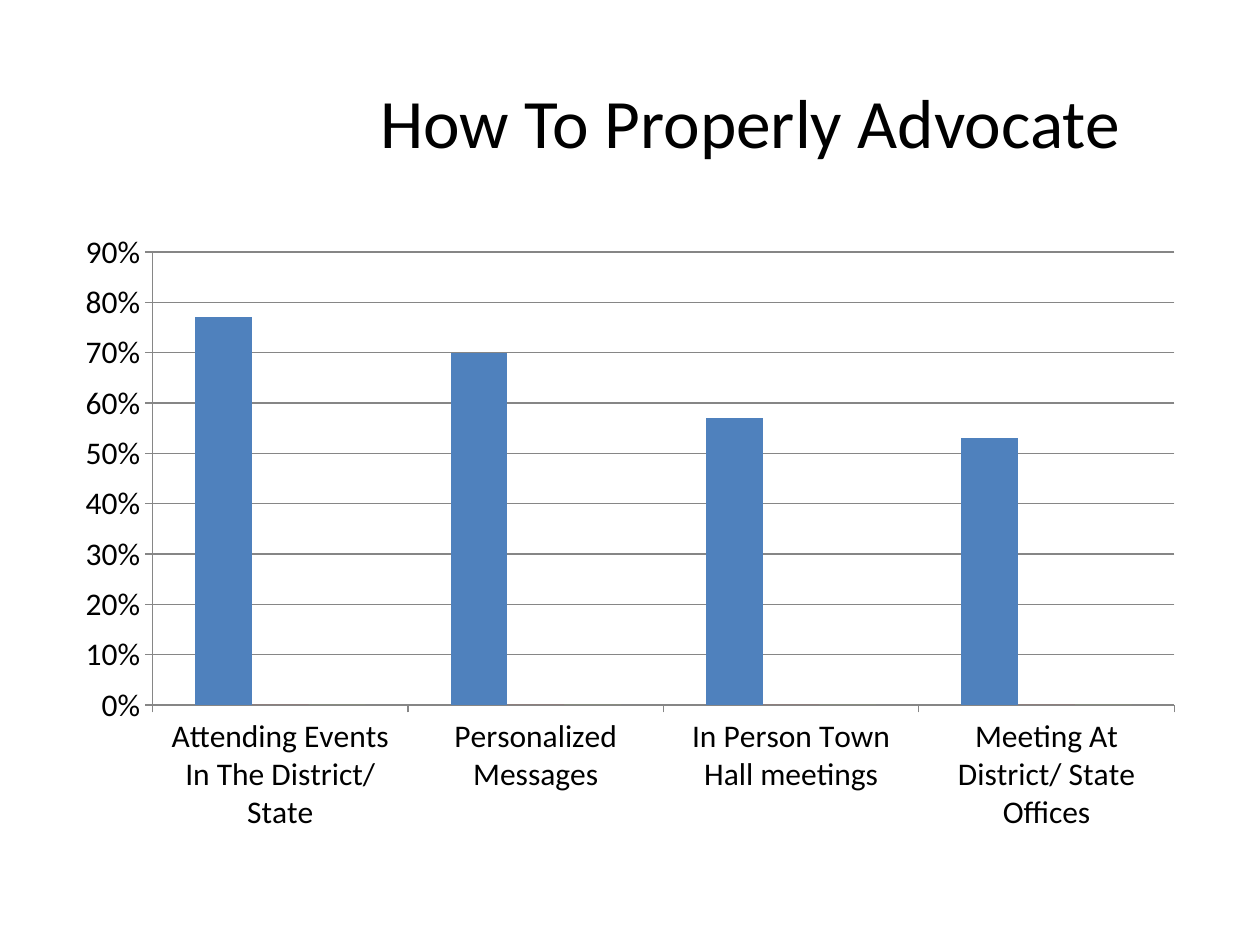
"""Build the advocacy slide: a title over a clustered column chart."""
from pptx import Presentation
from pptx.chart.data import CategoryChartData
from pptx.dml.color import RGBColor
from pptx.enum.chart import XL_CHART_TYPE, XL_TICK_MARK
from pptx.enum.text import MSO_ANCHOR, PP_ALIGN
from pptx.util import Inches, Pt

COLUMN = XL_CHART_TYPE.COLUMN_CLUSTERED
OUT = XL_TICK_MARK.OUTSIDE
MIDDLE = MSO_ANCHOR.MIDDLE
CENTER = PP_ALIGN.CENTER

BLACK = RGBColor(0x00, 0x00, 0x00)
GRAY = RGBColor(0x86, 0x86, 0x86)
BLUE = RGBColor(0x4F, 0x81, 0xBD)
RED = RGBColor(0xC0, 0x50, 0x4D)
GREEN = RGBColor(0x9B, 0xBB, 0x59)
FONT = "Calibri"

TITLE = "How To Properly Advocate"
WAYS = [
    "Attending Events In The District/State",
    "Personalized Messages",
    "In Person Town Hall meetings",
    "Meeting At District/ State Offices",
]
SERIES = [
    ("Series 1", (0.77, 0.7, 0.57, 0.53), BLUE),
    ("Series 2", (0, 0, 0, 0), RED),
    ("Series 3", (0, 0, 0, 0), GREEN),
]


def set_font(font, size, color=BLACK):
    font.name = FONT
    font.size = Pt(size)
    font.bold = False
    font.color.rgb = color


def add_text(slide, text, box, size, color=BLACK, align=CENTER, anchor=MIDDLE):
    frame = slide.shapes.add_textbox(*map(Inches, box)).text_frame
    frame.word_wrap = True
    frame.vertical_anchor = anchor
    line = frame.paragraphs[0]
    line.alignment = align
    run = line.add_run()
    run.text = text
    set_font(run.font, size, color)


def add_columns(slide, box):
    data = CategoryChartData(number_format="0%")
    data.categories = WAYS
    for name, values, _ in SERIES:
        data.add_series(name, values)
    chart = slide.shapes.add_chart(COLUMN, *map(Inches, box), data).chart
    chart.has_legend = False
    chart.has_title = False
    set_font(chart.font, 18)

    plot = chart.plots[0]
    plot.gap_width = 150
    plot.overlap = 0
    plot.vary_by_categories = False
    for series, (_, _, color) in zip(plot.series, SERIES):
        series.format.fill.solid()
        series.format.fill.fore_color.rgb = color

    scale = chart.value_axis
    scale.minimum_scale, scale.maximum_scale, scale.major_unit = 0, 0.9, 0.1
    scale.has_major_gridlines = True
    scale.tick_labels.number_format = "0%"
    scale.tick_labels.number_format_is_linked = False
    for axis in (scale, chart.category_axis):
        axis.major_tick_mark = OUT
    for part in (scale, chart.category_axis, scale.major_gridlines):
        part.format.line.color.rgb = GRAY
        part.format.line.width = Pt(0.75)


def main():
    deck = Presentation()
    deck.slide_width, deck.slide_height = Inches(10), Inches(7.5)
    slide = deck.slides.add_slide(deck.slide_layouts[6])
    add_text(slide, TITLE, (2.83, 0.33, 6.25, 1.25), 39.6)
    add_columns(slide, (0.5, 1.75, 9, 4.95))
    deck.save("out.pptx")


if __name__ == "__main__":
    main()
